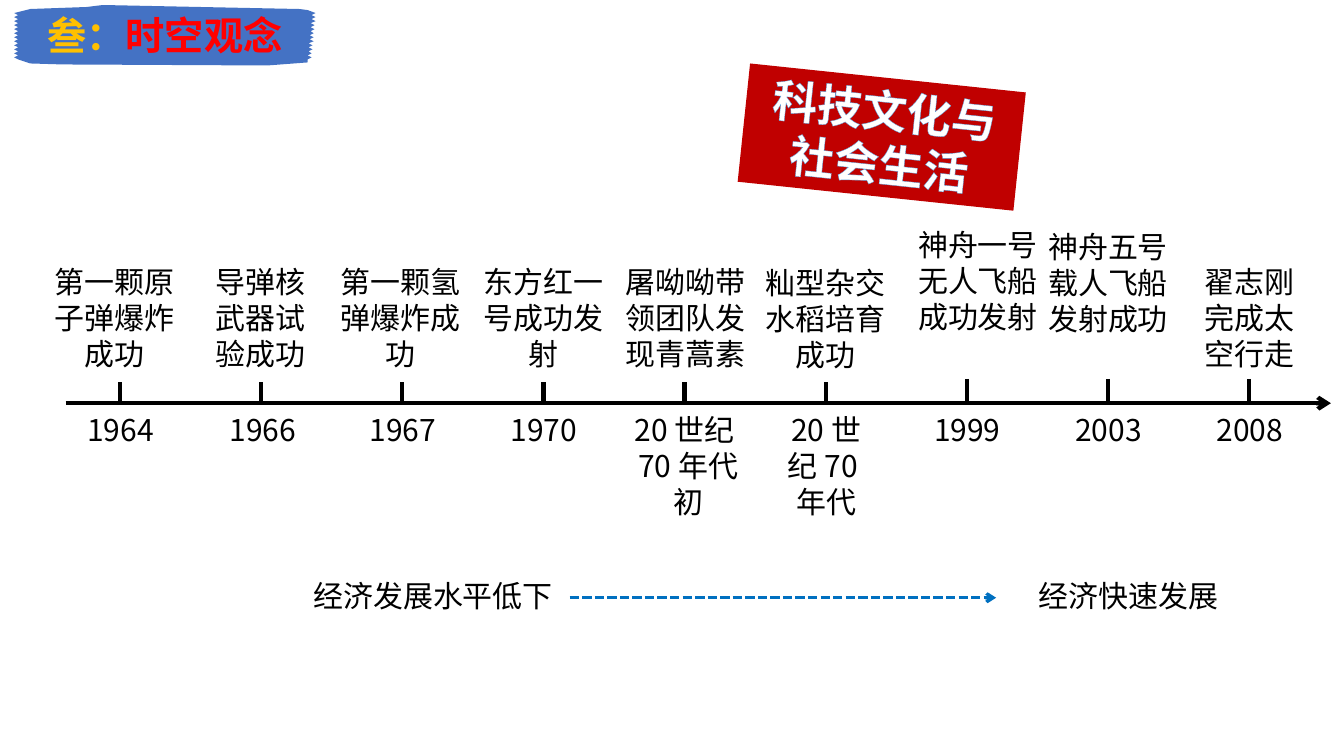
"""Build a timeline slide on science, culture and social life."""
from dataclasses import dataclass

from lxml import etree
from pptx import Presentation
from pptx.dml.color import RGBColor
from pptx.enum.dml import MSO_LINE
from pptx.enum.shapes import MSO_CONNECTOR, MSO_SHAPE
from pptx.enum.text import MSO_ANCHOR, MSO_AUTO_SIZE, PP_ALIGN
from pptx.oxml.ns import qn
from pptx.util import Pt

PX = 9144
STRAIGHT = MSO_CONNECTOR.STRAIGHT
RECTANGLE = MSO_SHAPE.RECTANGLE
DASH = MSO_LINE.SQUARE_DOT
TOP, MIDDLE = MSO_ANCHOR.TOP, MSO_ANCHOR.MIDDLE
LEFT, CENTER = PP_ALIGN.LEFT, PP_ALIGN.CENTER
GROW, FIXED = MSO_AUTO_SIZE.SHAPE_TO_FIT_TEXT, MSO_AUTO_SIZE.NONE


@dataclass(frozen=True)
class Theme:
    font: str = "Noto Sans CJK SC"
    ink: str = "000000"
    white: str = "FFFFFF"
    card: str = "C00000"
    outline: str = "5B9BD5"
    trend: str = "0070C0"
    brush: str = "4472C4"
    number: str = "FFC000"
    heading: str = "FF0000"
    body_size: float = 21.4
    heading_size: float = 28
    card_size: float = 32
    axis_weight: float = 3
    trend_weight: float = 2.25
    outline_weight: float = 0.8


@dataclass(frozen=True)
class Event:
    year: str
    text: str
    width: int
    shift: int = 0
    top: int = 257
    height: int = 118
    year_width: int = 117
    year_height: int = 46
    year_shift: int = 0
    tick_height: int = 21


THEME = Theme()

AXIS_LEFT, AXIS_RIGHT, AXIS_TOP = 65, 1320, 400
FIRST_TICK, TICK_GAP = 119, 140
YEAR_TOP = 403
TREND_TOP, TREND_LABEL_TOP, TREND_LABEL_HEIGHT = 593, 568, 46

EVENTS = [
    Event("1964", "第一颗原子弹爆炸成功", 153, shift=-6),
    Event("1966", "导弹核武器试验成功", 137, shift=-1, year_shift=1),
    Event("1967", "第一颗氢弹爆炸成功", 140, shift=-2),
    Event("1970", "东方红一号成功发射", 144),
    Event("20世纪70年代初", "屠呦呦带领团队发现青蒿素", 150, shift=1,
          year_width=145, year_height=82, year_shift=3),
    Event("20世纪70年代", "籼型杂交水稻培育成功", 150, top=258, year_height=82),
    Event("1999", "神舟一号无人飞船成功发射", 140, shift=11, top=220, height=154,
          tick_height=24),
    Event("2003", "神舟五号载人飞船发射成功", 142, top=222, tick_height=24),
    Event("2008", "翟志刚完成太空行走", 117, tick_height=24),
]


def brush_stroke(left, top, right, bottom, notch=4, step=2, corner=8, lean=5):
    """Return a brush stroke outline with bristle notches at both ends."""
    rows = range(top + corner, bottom - notch, step)
    left_end, right_end = [], []
    for index, row in enumerate(rows):
        bite = notch * (index % 2)
        slant = lean * index // len(rows)
        left_end.append((left + bite, row))
        right_end.append((right - bite - slant, row))
    upper = [(left + 2 * corner, top + corner // 2), (left + 9 * corner, top + 2),
             (left + 11 * corner, top), (right - 2 * corner, top + notch),
             (right - corner, top + notch + 1)]
    lower = [(right - corner, bottom - 3), (right - 6 * corner, bottom),
             (left + 6 * corner, bottom - 1), (left + 2 * corner, bottom - 2)]
    return upper + right_end + lower + left_end[::-1]


def write(shape, *pieces, size=THEME.body_size, bold=False, align=CENTER,
          anchor=TOP, wrap=True, fit=GROW, outline=None):
    """Fill a shape with one paragraph made of (text, colour) pieces."""
    frame = shape.text_frame
    frame.word_wrap = wrap
    frame.auto_size = fit
    frame.vertical_anchor = anchor
    para = frame.paragraphs[0]
    para.alignment = align
    for text, color in pieces:
        span = para.add_run()
        span.text = text
        font = span.font
        font.size, font.bold, font.name = Pt(size), bold, THEME.font
        font.color.rgb = RGBColor.from_string(color)
        props = span._r.get_or_add_rPr()
        etree.SubElement(props, qn("a:ea"), typeface=THEME.font)
        if outline:
            edge = etree.Element(qn("a:ln"), w=str(Pt(THEME.outline_weight)))
            fill = etree.SubElement(edge, qn("a:solidFill"))
            etree.SubElement(fill, qn("a:srgbClr"), val=outline)
            props.insert(0, edge)


class Painter:
    """Draw styled elements on the current slide."""

    def __init__(self, page, theme):
        self.shapes = page.shapes
        self.theme = theme

    def paint(self, shape, color):
        """Give a shape a plain fill."""
        shape.shadow.inherit = False
        shape.fill.solid()
        shape.fill.fore_color.rgb = RGBColor.from_string(color)
        shape.line.fill.background()
        return shape

    def label(self, text, *place, **style):
        """Add a text box at left, top, width, height."""
        box = self.shapes.add_textbox(*(n * PX for n in place))
        write(box, (text, self.theme.ink), **style)

    def card(self, color, *place, turn=0):
        """Add a filled, turned rectangle."""
        box = self.shapes.add_shape(RECTANGLE, *(n * PX for n in place))
        box.rotation = turn
        return self.paint(box, color)

    def outline(self, points, color):
        """Add a filled closed outline."""
        builder = self.shapes.build_freeform(*points[0], scale=PX)
        builder.add_line_segments(points[1:], close=True)
        return self.paint(builder.convert_to_shape(), color)

    def line(self, *ends, color, weight, dash=None, arrow=False):
        """Add a straight line between two points."""
        link = self.shapes.add_connector(STRAIGHT, *(n * PX for n in ends))
        link.line.color.rgb = RGBColor.from_string(color)
        link.line.width = Pt(weight)
        if dash:
            link.line.dash_style = dash
        if arrow:
            etree.SubElement(link.line._get_or_add_ln(), qn("a:tailEnd"), type="arrow")
        etree.SubElement(link._element.spPr, qn("a:effectLst"))

    def event(self, event, tick):
        """Add an event's tick, its year below and its text above."""
        self.line(tick, AXIS_TOP - event.tick_height, tick, AXIS_TOP,
                  color=self.theme.ink, weight=self.theme.axis_weight)
        self.label(event.year, tick + event.year_shift - event.year_width // 2,
                   YEAR_TOP, event.year_width, event.year_height)
        self.label(event.text, tick + event.shift - event.width // 2,
                   event.top, event.width, event.height)


def main():
    """Build and save the deck."""
    deck = Presentation()
    deck.slide_width, deck.slide_height = 1333 * PX, 750 * PX
    page = deck.slides.add_slide(deck.slide_layouts[6])
    painter = Painter(page, THEME)

    topic = painter.card(THEME.card, 737, 77, 275, 118, turn=6)
    write(topic, ("科技文化与社会生活", THEME.white), size=THEME.card_size,
          bold=True, outline=THEME.outline)

    painter.line(AXIS_LEFT, AXIS_TOP, AXIS_RIGHT, AXIS_TOP, color=THEME.ink,
                 weight=THEME.axis_weight, arrow=True)
    for index, event in enumerate(EVENTS):
        painter.event(event, FIRST_TICK + index * TICK_GAP)

    painter.label("经济发展水平低下", 301, TREND_LABEL_TOP, 258, TREND_LABEL_HEIGHT,
                  align=LEFT, wrap=False)
    painter.line(565, TREND_TOP, 988, TREND_TOP, color=THEME.trend,
                 weight=THEME.trend_weight, dash=DASH, arrow=True)
    painter.label("经济快速发展", 1020, TREND_LABEL_TOP, 198, TREND_LABEL_HEIGHT,
                  wrap=False)

    banner = painter.outline(brush_stroke(14, 5, 313, 65), THEME.brush)
    write(banner, ("叁：", THEME.number), ("时空观念", THEME.heading),
          size=THEME.heading_size, bold=True, anchor=MIDDLE, fit=FIXED)

    deck.save("out.pptx")


if __name__ == "__main__":
    main()
